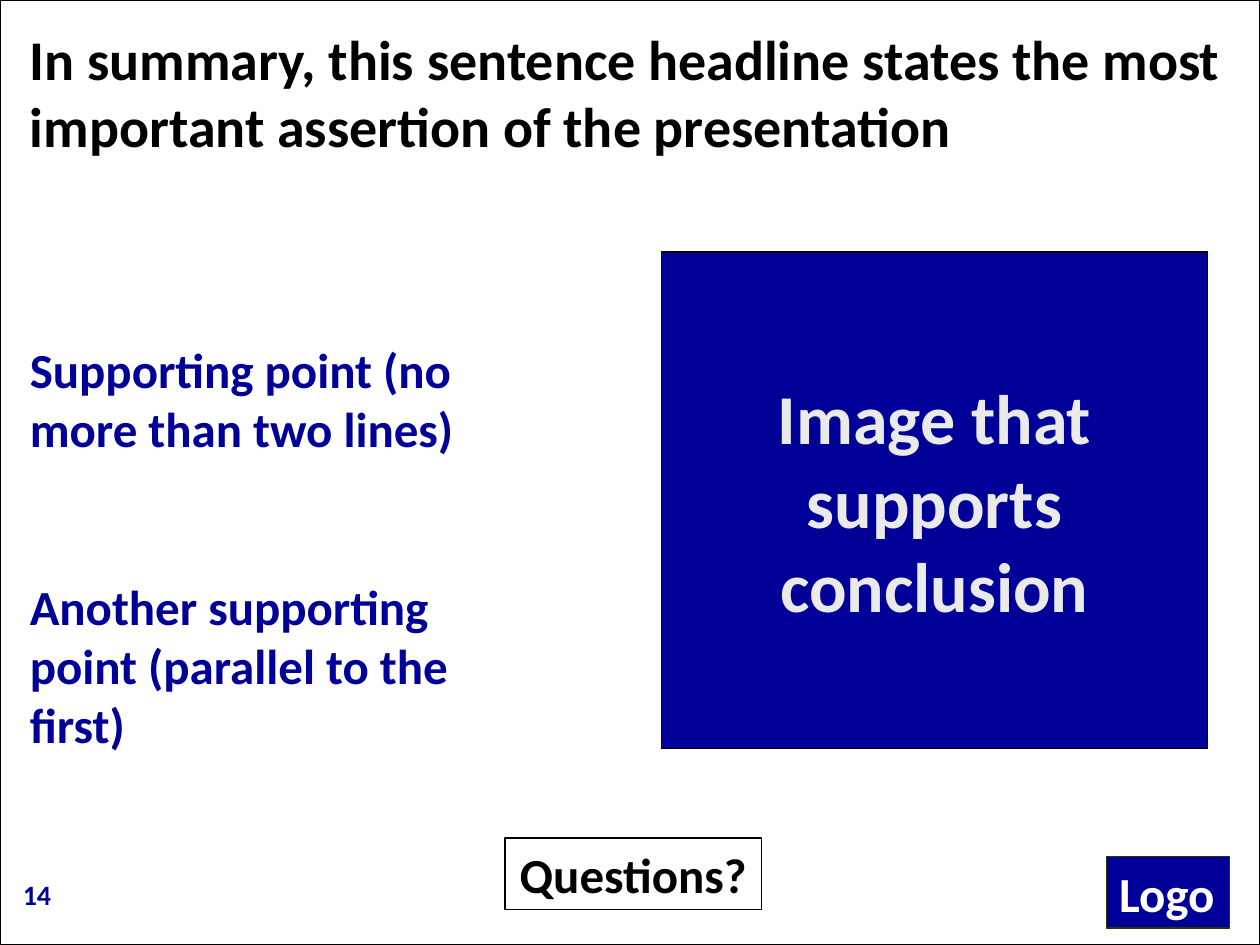
from pptx import Presentation
from pptx.dml.color import RGBColor
from pptx.enum import shapes, text
from pptx.util import Inches, Pt

COLS, ROWS = 120, 90
UNIT = Inches(10) // COLS
HUES = {"ink": "000000", "blue": "000099", "pale": "EAEAEA",
        "white": "FFFFFF", "olive": "333300"}
LEFT, MID = text.PP_ALIGN.LEFT, text.PP_ALIGN.CENTER
THIN = (0.07, 0.03)
WIDE = (0.1, 0.05)


def hue(name):
    return RGBColor.from_string(HUES[name])


def span(box):
    """Turn a box of grid columns and rows into slide lengths."""
    return [round(n * UNIT) for n in box]


def part(box, dx, dy, w, h):
    """Give a box inside another, offset from its corner in grid units."""
    return box[0] + dx, box[1] + dy, w, h


def write(shape, *lines, size=28, color="ink", bold=True, align=LEFT,
          pad=WIDE, mid=False, wrap=True, gap=0):
    frame = shape.text_frame
    frame.word_wrap = wrap
    frame.margin_left = frame.margin_right = Inches(pad[0])
    frame.margin_top = frame.margin_bottom = Inches(pad[1])
    anchor = text.MSO_ANCHOR
    frame.vertical_anchor = anchor.MIDDLE if mid else anchor.TOP
    for i, line in enumerate(lines):
        para = frame.add_paragraph() if i else frame.paragraphs[0]
        para.alignment = align
        if i:
            para.space_before = Pt(gap)
        run = para.add_run()
        run.text = line
        font = run.font
        font.name, font.size, font.bold = "Calibri", Pt(size), bold
        font.color.rgb = hue(color)


def label(slide, box, *lines, **style):
    write(slide.shapes.add_textbox(*span(box)), *lines, **style)


def panel(slide, box, fill=None, line="ink", width=0.75):
    shape = slide.shapes.add_shape(shapes.MSO_SHAPE.RECTANGLE, *span(box))
    shape.shadow.inherit = False
    if fill:
        shape.fill.solid()
        shape.fill.fore_color.rgb = hue(fill)
    else:
        shape.fill.background()
    shape.line.color.rgb = hue(line)
    shape.line.width = Pt(width)
    return shape


def title(slide, box):
    label(slide, box, "In summary, this sentence headline states the most "
          "important assertion of the presentation", size=32, pad=THIN)


def body(slide, box):
    """Place the supporting points on the left and the image on the right."""
    label(slide, part(box, 0, 8, 50, 40.2),
          "Supporting point (no more than two lines)",
          "Another supporting point (parallel to the first)",
          color="blue", pad=THIN, gap=68)
    image = panel(slide, part(box, 61, 0, 52, 47.3), fill="blue")
    write(image, "Image that supports conclusion", size=40, color="pale",
          align=MID, mid=True)


def footer(slide, box):
    """Place the page number, the closing question and the logo block."""
    label(slide, part(box, 0, 3.2, 25, 6), "14", size=16, color="blue")
    ask = panel(slide, part(box, 47.1, 0, 24.4, 6.8))
    write(ask, "Questions?", align=MID, wrap=False)
    logo = panel(slide, part(box, 104.4, 1.8, 11.7, 6.8),
                 fill="blue", line="olive")
    write(logo, "Logo", color="white", wrap=False)


def main():
    deck = Presentation()
    deck.slide_width, deck.slide_height = COLS * UNIT, ROWS * UNIT
    slide = deck.slides.add_slide(deck.slide_layouts[6])
    back = slide.background.fill
    back.solid()
    back.fore_color.rgb = hue("white")
    panel(slide, (0, 0, COLS, ROWS), width=0.5)
    title(slide, (2, 2, 117, 13.6))
    body(slide, (2, 24, 113, 48))
    footer(slide, (1, 79.8, 116, 9))
    deck.save("out.pptx")


if __name__ == "__main__":
    main()
